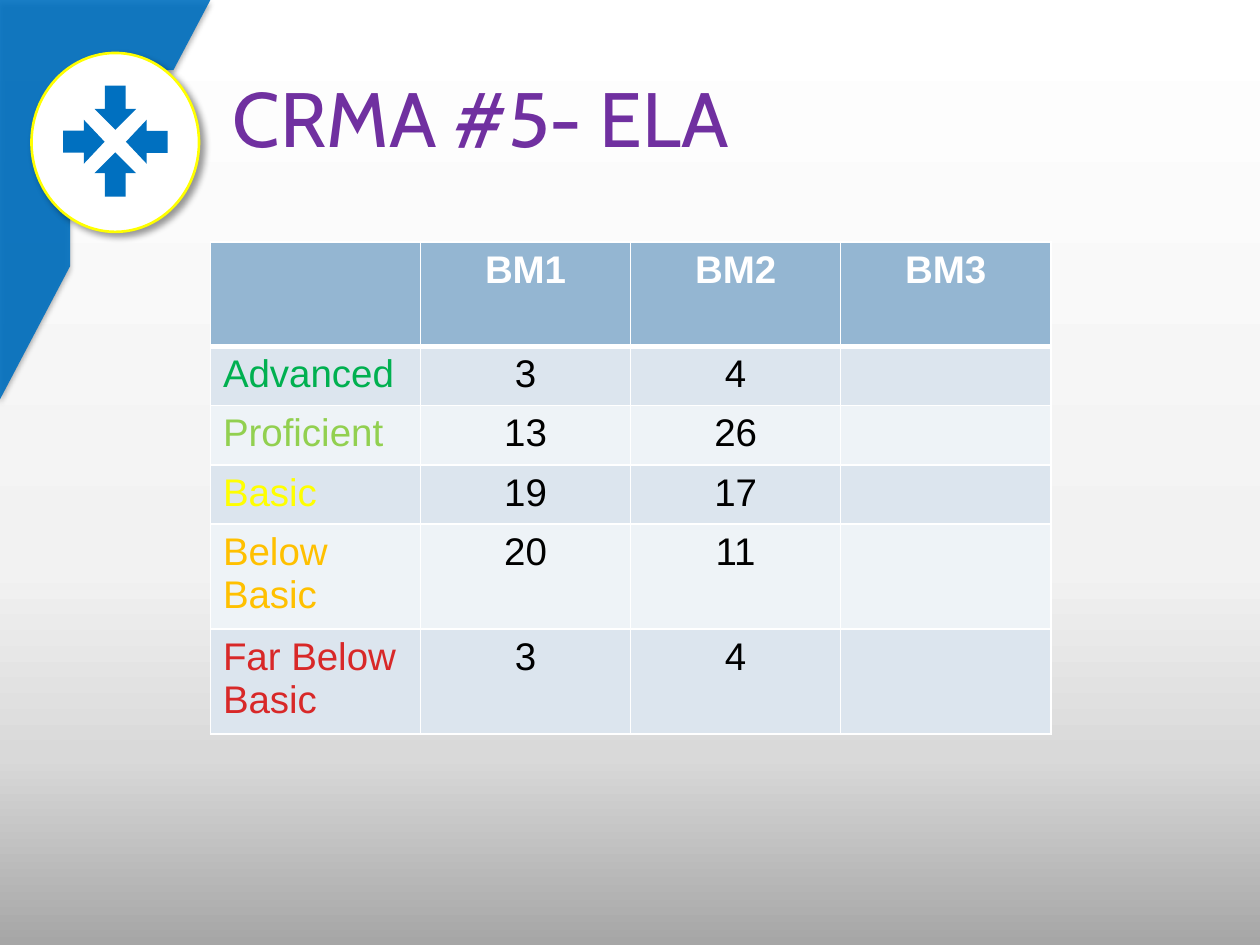
from pptx import Presentation
from pptx.dml.color import RGBColor as RGB
from pptx.enum.shapes import MSO_SHAPE as Shape
from pptx.enum.text import MSO_ANCHOR as Anchor, PP_ALIGN as Align
from pptx.oxml import parse_xml
from pptx.oxml.ns import nsdecls, qn
from pptx.util import Inches, Pt

TITLE = "CRMA #5- ELA"
HEAD = ["", "BM1", "BM2", "BM3"]
ROWS = [
    ("Advanced", "3", "4", ""),
    ("Proficient", "13", "26", ""),
    ("Basic", "19", "17", ""),
    ("Below Basic", "20", "11", ""),
    ("Far Below Basic", "3", "4", ""),
]
LEVELS = ["00B050", "92D050", "FFFF00", "FFC000", "D82828"]
HEIGHTS = [0.83, 0.47, 0.47, 0.47, 0.78, 0.78]
ARROWS = [(0, 0, 0.26), (90, -0.25, 0), (180, 0, -0.27), (270, 0.25, 0)]

THEME = {
    "blue": "0070C0", "white": "FFFFFF", "ring": "FFFF00", "ink": "000000",
    "title": "7030A0", "head": "94B6D2", "bands": ["DCE5EE", "EEF3F7"],
    "back": [(0, "FFFFFF"), (60, "F2F2F2"), (80, "D9D9D9"), (100, "A6A6A6")],
    "face": "Cabin", "body": "Arial", "big": 44, "text": 22,
}


def paint_back(slide):
    """Fill the background with a top-to-bottom gradient."""
    fill = slide.background.fill
    fill.gradient()
    grad = slide.background._cSld.find(".//" + qn("a:gradFill"))
    stops = "".join(f'<a:gs pos="{pos * 1000}"><a:srgbClr val="{tone}"/></a:gs>'
                    for pos, tone in THEME["back"])
    new = parse_xml(f'<a:gradFill rotWithShape="1" {nsdecls("a")}><a:gsLst>{stops}</a:gsLst>'
                    '<a:lin ang="5400000" scaled="0"/></a:gradFill>')
    grad.getparent().replace(grad, new)


def add_form(shapes, kind, box, tone):
    """Add a filled preset shape without line or shadow."""
    form = shapes.add_shape(kind, *map(Inches, box))
    form.shadow.inherit = False
    form.fill.solid()
    form.fill.fore_color.rgb = RGB.from_string(tone)
    form.line.fill.background()
    return form


def cast(form, alpha, blur, dist, angle):
    """Give a shape a soft outer shadow."""
    form._element.spPr.find(qn("a:effectLst")).append(parse_xml(
        f'<a:outerShdw {nsdecls("a")} blurRad="{Pt(blur)}" dist="{Pt(dist)}" '
        f'dir="{angle * 60000}" algn="ctr" rotWithShape="0"><a:srgbClr val="{THEME["ink"]}">'
        f'<a:alpha val="{alpha * 1000}"/></a:srgbClr></a:outerShdw>'))


def add_badge(slide):
    """Draw the corner frame and the round badge of arrows."""
    frame = add_form(slide.shapes, Shape.HALF_FRAME, (0, 0, 1.67, 3.17), THEME["blue"])
    frame._element.spPr.find(".//" + qn("a:srgbClr")).append(
        parse_xml(f'<a:alpha {nsdecls("a")} val="90000"/>'))
    cast(frame, 35, 3, 2, 90)
    parts = slide.shapes.add_group_shape().shapes
    disc = add_form(parts, Shape.OVAL, (0.25, 0.42, 1.33, 1.42), THEME["white"])
    disc.line.color.rgb = RGB.from_string(THEME["ring"])
    disc.line.width = Pt(1.5)
    cast(disc, 40, 4, 3, 45)
    for turn, dx, dy in ARROWS:
        wide, tall = (0.35, 0.33) if turn % 180 else (0.33, 0.35)
        box = (0.915 + dx - wide / 2, 1.125 + dy - tall / 2, wide, tall)
        add_form(parts, Shape.UP_ARROW, box, THEME["blue"]).rotation = turn


def style(para, face, size, tone, bold=False):
    """Set the font of each run in a paragraph."""
    for run in para.runs:
        font = run.font
        font.name, font.size, font.bold = face, Pt(size), bold
        font.color.rgb = RGB.from_string(tone)


def add_title(slide):
    """Place the slide title."""
    frame = slide.shapes.add_textbox(*map(Inches, (1.75, 0.42, 7.83, 0.92))).text_frame
    frame.word_wrap = True
    frame.vertical_anchor = Anchor.BOTTOM
    frame.text = TITLE
    style(frame.paragraphs[0], THEME["face"], THEME["big"], THEME["title"])


def edge(cell, head):
    """Draw white borders around a cell, heavier below the header."""
    props = cell._tc.get_or_add_tcPr()
    for spot, side in enumerate("LRTB"):
        width = Pt(3 if head and side == "B" else 1)
        props.insert(spot, parse_xml(
            f'<a:ln{side} {nsdecls("a")} w="{width}"><a:solidFill>'
            f'<a:srgbClr val="{THEME["white"]}"/></a:solidFill></a:ln{side}>'))


def add_scores(slide):
    """Build the table of benchmark scores."""
    grid = slide.shapes.add_table(len(ROWS) + 1, len(HEAD), Inches(1.67), Inches(1.92),
                                  Inches(6.67), Inches(sum(HEIGHTS))).table
    for row, height in zip(grid.rows, HEIGHTS):
        row.height = Inches(height)
    for r, row in enumerate([HEAD, *ROWS]):
        for c, word in enumerate(row):
            cell = grid.cell(r, c)
            cell.fill.solid()
            cell.fill.fore_color.rgb = RGB.from_string(
                THEME["bands"][(r - 1) % 2] if r else THEME["head"])
            edge(cell, r == 0)
            if not word:
                continue
            cell.text_frame.text = word
            para = cell.text_frame.paragraphs[0]
            para.alignment = Align.CENTER if c else Align.LEFT
            tone = THEME["white"] if r == 0 else THEME["ink"] if c else LEVELS[r - 1]
            style(para, THEME["body"], THEME["text"], tone, r == 0)


def main():
    """Build and save the slide."""
    deck = Presentation()
    deck.slide_width, deck.slide_height = Inches(10), Inches(7.5)
    slide = deck.slides.add_slide(deck.slide_layouts[6])
    paint_back(slide)
    add_badge(slide)
    add_title(slide)
    add_scores(slide)
    deck.save("out.pptx")


if __name__ == "__main__":
    main()
